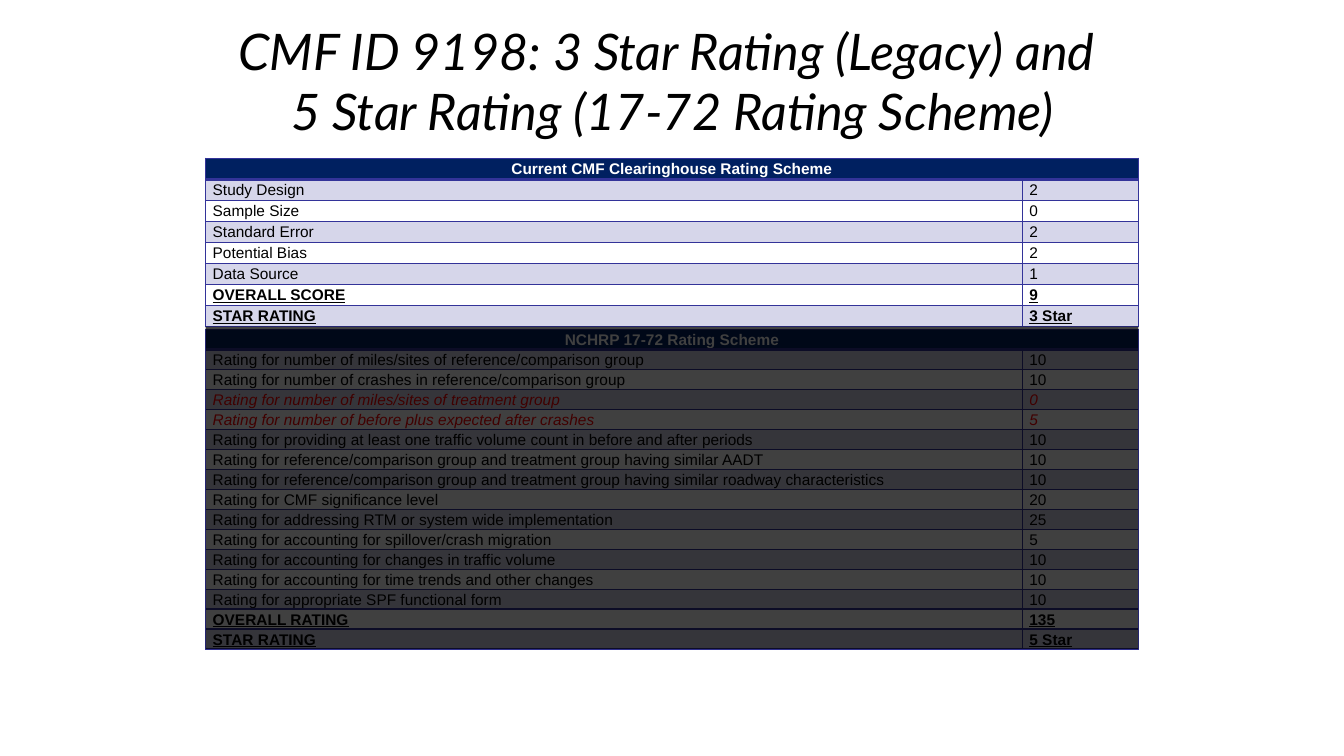
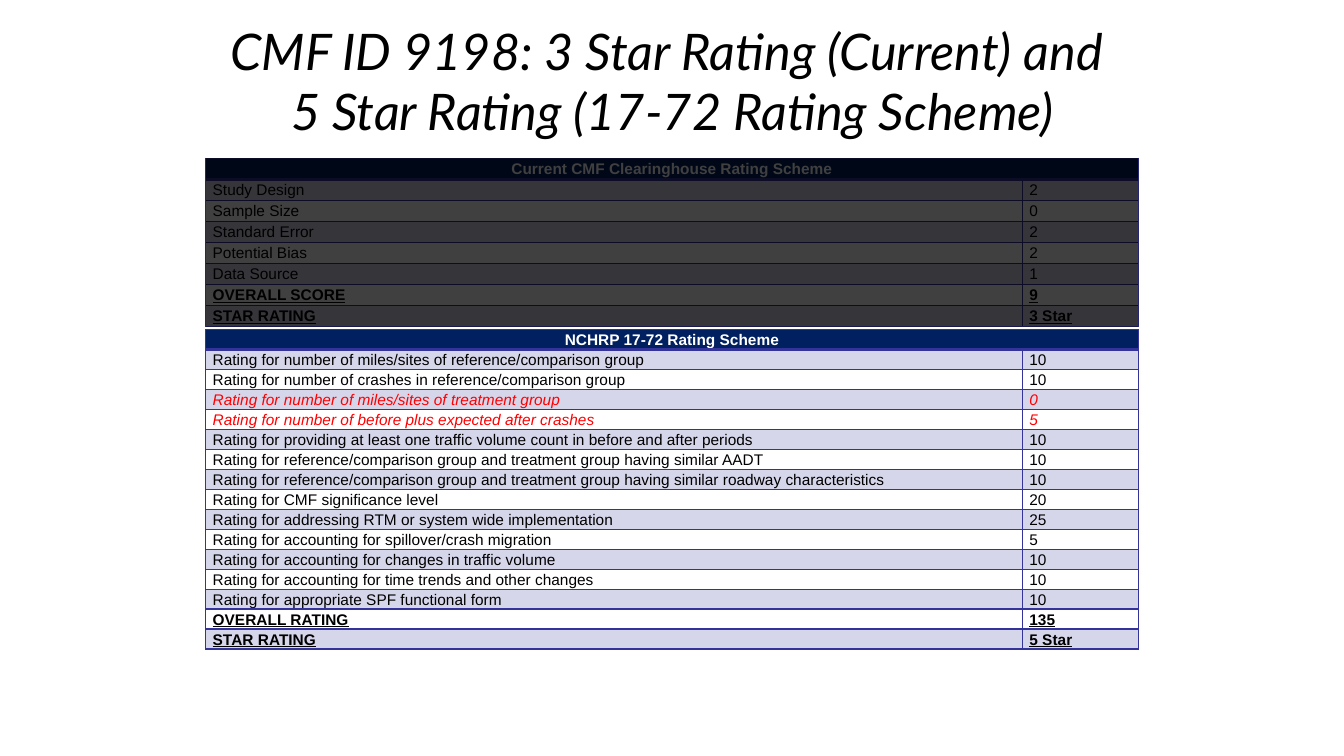
"""Builds two slides that compare the star ratings of one CMF under two schemes."""
from dataclasses import dataclass

from lxml.etree import SubElement
from pptx import Presentation
from pptx.dml.color import RGBColor
from pptx.enum.shapes import MSO_SHAPE
from pptx.enum.text import MSO_ANCHOR, PP_ALIGN
from pptx.oxml.ns import qn
from pptx.util import Inches, Pt


@dataclass(frozen=True)
class Theme:
    ink: str = "000000"
    paper: str = "FFFFFF"
    navy: str = "002060"
    violet: str = "333399"
    red: str = "FF0000"
    head_font: str = "Lato"
    body_font: str = "Arial"
    head_size: int = 36
    body_size: int = 11
    tint: int = 20
    shade: int = 75
    thin: int = 1
    thick: int = 2


THEME = Theme()
TITLE_BOX = (1.67, 0.17, 10, 1.25)
OLD_BOX = (2.04, 1.57, 9.25, 1.67)
NEW_BOX = (2.04, 3.27, 9.25, 3.17)
NEW_COVER = (2.04, 3.24, 9.25, 3.2)
SCORE_WIDTH = 1.15
CELL_INSET = 0.07
TOTAL_ROWS = 2

OLD_SCHEME = ("Current CMF Clearinghouse Rating Scheme", [
    ("Study Design", "2"),
    ("Sample Size", "0"),
    ("Standard Error", "2"),
    ("Potential Bias", "2"),
    ("Data Source", "1"),
    ("OVERALL SCORE", "9"),
    ("STAR RATING", "3 Star"),
], ())
NEW_SCHEME = ("NCHRP 17-72 Rating Scheme", [
    ("Rating for number of miles/sites of reference/comparison group", "10"),
    ("Rating for number of crashes in reference/comparison group", "10"),
    ("Rating for number of miles/sites of treatment group", "0"),
    ("Rating for number of before plus expected after crashes", "5"),
    ("Rating for providing at least one traffic volume count in before and after periods", "10"),
    ("Rating for reference/comparison group and treatment group having similar AADT", "10"),
    ("Rating for reference/comparison group and treatment group having similar roadway characteristics", "10"),
    ("Rating for CMF significance level", "20"),
    ("Rating for addressing RTM or system wide implementation", "25"),
    ("Rating for accounting for spillover/crash migration", "5"),
    ("Rating for accounting for changes in traffic volume", "10"),
    ("Rating for accounting for time trends and other changes", "10"),
    ("Rating for appropriate SPF functional form", "10"),
    ("OVERALL RATING", "135"),
    ("STAR RATING", "5 Star"),
], (3, 4))
SLIDES = [("Legacy", NEW_COVER), ("Current", OLD_BOX)]


def write(frame, text, *, size=THEME.body_size, font=THEME.body_font, color=THEME.ink,
          bold=False, italic=False, line=False, align=PP_ALIGN.LEFT, pitch=None, after=None):
    """Write text into the first paragraph of a frame, with a break at each newline."""
    para = frame.paragraphs[0]
    para.alignment = align
    if pitch:
        para.line_spacing = pitch
    if after:
        para.space_after = Pt(after)
    for index, part in enumerate(text.split("\n")):
        if index:
            para.add_line_break()
        run = para.add_run()
        run.text = part
        style = run.font
        style.size, style.name = Pt(size), font
        style.bold, style.italic, style.underline = bold, italic, line
        style.color.rgb = RGBColor.from_string(color)


def paint(fill, color, alpha=100):
    """Give a fill a solid colour at a percentage of opacity."""
    fill.solid()
    fill.fore_color.rgb = RGBColor.from_string(color)
    if alpha < 100:
        tone = fill._xPr.find(qn("a:solidFill"))[0]
        SubElement(tone, qn("a:alpha"), val=str(alpha * 1000))


def frame_cell(cell, top, bottom):
    """Draw the four borders of a cell."""
    props = cell._tc.get_or_add_tcPr()
    for side, width in (("L", THEME.thin), ("R", THEME.thin), ("T", top), ("B", bottom)):
        edge = SubElement(props, qn(f"a:ln{side}"), w=str(Pt(width)))
        SubElement(SubElement(edge, qn("a:solidFill")), qn("a:srgbClr"), val=THEME.violet)


def fill_cell(cell, row, text, **style):
    """Set the borders, fill and text of a cell by its row."""
    frame_cell(cell, THEME.thick if row == 1 else THEME.thin,
               THEME.thick if row == 0 else THEME.thin)
    if row == 0:
        paint(cell.fill, THEME.navy)
    elif row % 2:
        paint(cell.fill, THEME.violet, THEME.tint)
    else:
        cell.fill.background()
    cell.vertical_anchor = MSO_ANCHOR.MIDDLE
    cell.margin_left = cell.margin_right = Inches(CELL_INSET)
    cell.margin_top = cell.margin_bottom = 0
    if text:
        write(cell.text_frame, text, pitch=1.07, after=8, **style)


def add_scheme(slide, box, scheme):
    """Place the table of one rating scheme in a box."""
    heading, scores, weak = scheme
    count = len(scores) + 1
    table = slide.shapes.add_table(count, 2, *map(Inches, box)).table
    table.first_row = table.horz_banding = False
    for column, width in zip(table.columns, (box[2] - SCORE_WIDTH, SCORE_WIDTH)):
        column.width = Inches(width)
    for row in table.rows:
        row.height = Inches(box[3] / count)
    table.cell(0, 0).merge(table.cell(0, 1))
    for column, text in enumerate((heading, "")):
        fill_cell(table.cell(0, column), 0, text, color=THEME.paper, bold=True,
                  align=PP_ALIGN.CENTER)
    for row, pair in enumerate(scores, 1):
        total = row >= count - TOTAL_ROWS
        for column, text in enumerate(pair):
            fill_cell(table.cell(row, column), row, text, bold=total, line=total,
                      italic=row in weak, color=THEME.red if row in weak else THEME.ink)


def add_title(slide, box, text):
    """Place the slide title in a box."""
    frame = slide.shapes.add_textbox(*map(Inches, box)).text_frame
    frame.word_wrap = True
    frame.vertical_anchor = MSO_ANCHOR.MIDDLE
    frame.margin_top = frame.margin_bottom = 0
    write(frame, text, size=THEME.head_size, font=THEME.head_font, italic=True,
          align=PP_ALIGN.CENTER)


def add_cover(slide, box):
    """Dim a box with a dark see-through panel."""
    panel = slide.shapes.add_shape(MSO_SHAPE.RECTANGLE, *map(Inches, box))
    panel.shadow.inherit = False
    paint(panel.fill, THEME.ink, THEME.shade)
    panel.line.fill.background()


def add_slide(deck, label, cover):
    """Add a slide with both schemes, one of them dimmed."""
    slide = deck.slides.add_slide(deck.slide_layouts[6])
    paint(slide.background.fill, THEME.paper)
    add_title(slide, TITLE_BOX, f"CMF ID 9198: 3 Star Rating ({label}) and \n"
                                "5 Star Rating (17-72 Rating Scheme)")
    add_scheme(slide, OLD_BOX, OLD_SCHEME)
    add_scheme(slide, NEW_BOX, NEW_SCHEME)
    add_cover(slide, cover)


def main():
    """Build and save the deck."""
    deck = Presentation()
    deck.slide_width, deck.slide_height = Inches(13.33), Inches(7.5)
    for label, cover in SLIDES:
        add_slide(deck, label, cover)
    deck.save("out.pptx")


if __name__ == "__main__":
    main()
